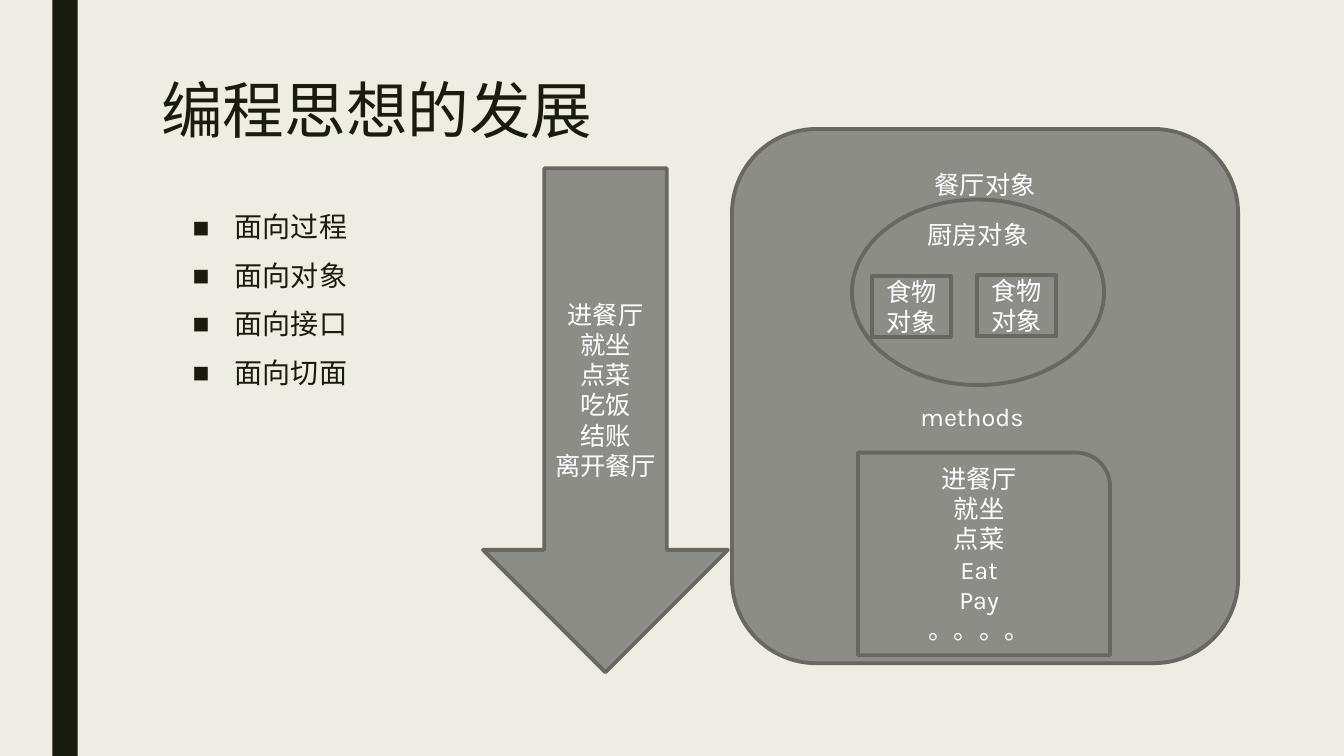
"""Build the slide on how programming paradigms developed."""
from pptx import Presentation
from pptx import util as u
from pptx.dml.color import RGBColor
from pptx.enum import shapes, text
from pptx.oxml.ns import qn
from lxml import etree

PAPER = RGBColor(0xEF, 0xED, 0xE3)
INK = RGBColor(0x19, 0x1B, 0x0E)
GREY = RGBColor(0x8C, 0x8D, 0x86)
OUTLINE = RGBColor(0x68, 0x68, 0x63)
WHITE = RGBColor(0xFF, 0xFF, 0xFF)
FONT = "Karla"
SHAPE = shapes.MSO_SHAPE


def write(frame, lines, size=18, color=WHITE, align=text.PP_ALIGN.CENTER,
          anchor=text.MSO_ANCHOR.MIDDLE, spacing=None, before=0, after=0, bottom=0.05):
    frame.word_wrap = True
    frame.auto_size = text.MSO_AUTO_SIZE.NONE
    frame.vertical_anchor = anchor
    frame.margin_bottom = u.Inches(bottom)
    for index, line in enumerate(lines):
        paragraph = frame.add_paragraph() if index else frame.paragraphs[0]
        paragraph.alignment = align
        paragraph.line_spacing = spacing
        paragraph.space_before = u.Pt(before)
        paragraph.space_after = u.Pt(after)
        run = paragraph.add_run()
        run.text = line
        run.font.name = FONT
        run.font.size = u.Pt(size)
        run.font.color.rgb = color


class SlideBuilder:
    def __init__(self, presentation):
        self.slide = presentation.slides.add_slide(presentation.slide_layouts[1])
        self.slide.background.fill.solid()
        self.slide.background.fill.fore_color.rgb = PAPER

    def place(self, shape, box):
        shape.left, shape.top, shape.width, shape.height = map(u.Inches, box)

    def title(self, line, box):
        shape = self.slide.shapes.title
        self.place(shape, box)
        write(shape.text_frame, [line], size=44, color=INK, align=text.PP_ALIGN.LEFT,
              anchor=text.MSO_ANCHOR.TOP, spacing=0.89)

    def bullets(self, lines, box):
        shape = self.slide.placeholders[1]
        self.place(shape, box)
        write(shape.text_frame, lines, size=20, color=INK, align=text.PP_ALIGN.LEFT,
              anchor=text.MSO_ANCHOR.TOP, spacing=0.94, before=10, after=2)
        for paragraph in shape.text_frame.paragraphs:
            properties = paragraph._p.get_or_add_pPr()
            properties.set("marL", str(u.Inches(0.42)))
            properties.set("indent", str(u.Inches(-0.42)))
            etree.SubElement(properties, qn("a:buChar")).set("char", "■")

    def block(self, kind, box, lines=(), fill=GREY, outline=OUTLINE, **style):
        shape = self.slide.shapes.add_shape(kind, *map(u.Inches, box))
        shape.shadow.inherit = False
        shape.fill.solid()
        shape.fill.fore_color.rgb = fill
        if outline is None:
            shape.line.fill.background()
        else:
            shape.line.color.rgb = outline
            shape.line.width = u.Pt(2.75)
        write(shape.text_frame, lines, **style)


def main():
    presentation = Presentation()
    presentation.slide_width = u.Inches(13.33)
    presentation.slide_height = u.Inches(7.5)
    builder = SlideBuilder(presentation)

    builder.block(SHAPE.RECTANGLE, (0.52, 0, 0.25, 7.5), fill=INK, outline=None)
    builder.title("编程思想的发展", (1.5, 0.75, 10.5, 1.62))
    builder.bullets(["面向过程", "面向对象", "面向接口", "面向切面"], (1.81, 2.06, 4.53, 3.77))

    arrival = ["进餐厅", "就坐", "点菜"]
    builder.block(SHAPE.DOWN_ARROW, (4.79, 1.67, 2.43, 5),
                  arrival + ["吃饭", "结账", "离开餐厅"])
    builder.block(SHAPE.ROUNDED_RECTANGLE, (7.26, 1.28, 5.02, 5.3), ["餐厅对象"], bottom=4.24)
    builder.block(SHAPE.OVAL, (8.45, 1.98, 2.5, 1.84), ["厨房对象"], bottom=1.2)
    for left, top in ((8.65, 2.74), (9.69, 2.73)):
        builder.block(SHAPE.RECTANGLE, (left, top, 0.78, 0.6), ["食物对象"])
    builder.block(SHAPE.ROUND_1_RECTANGLE, (8.51, 4.49, 2.5, 2.01),
                  arrival + ["Eat", "Pay", "。。。。"])
    builder.block(SHAPE.ROUND_1_RECTANGLE, (8.51, 3.85, 2.29, 0.57), ["methods"], outline=None)

    presentation.save("out.pptx")


if __name__ == "__main__":
    main()
